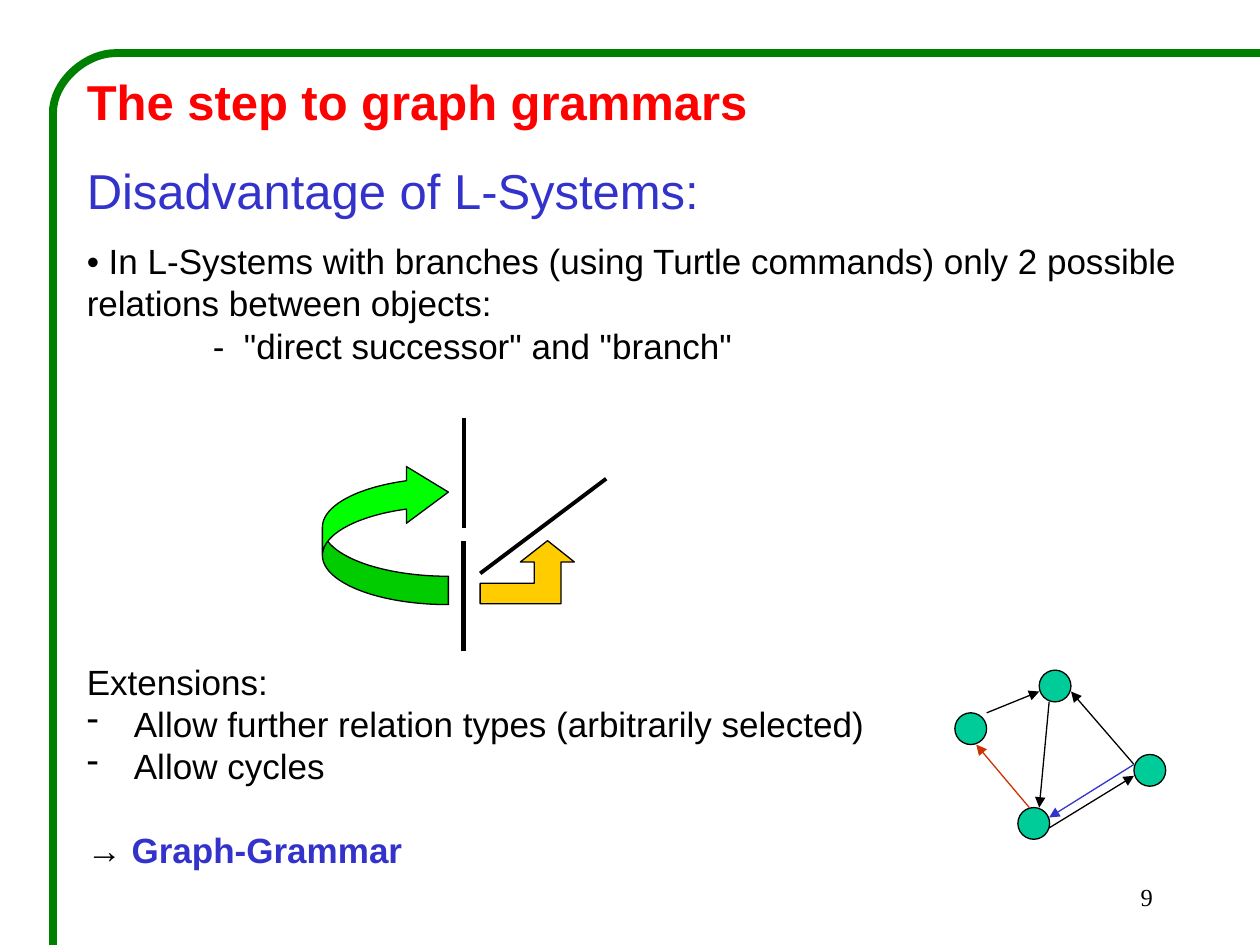
from lxml import etree
from pptx import Presentation
from pptx.dml.color import RGBColor
from pptx.enum.shapes import MSO_CONNECTOR, MSO_SHAPE
from pptx.enum.text import PP_ALIGN
from pptx.oxml.ns import qn
from pptx.util import Cm, Pt

STRAIGHT, CURVE = MSO_CONNECTOR.STRAIGHT, MSO_CONNECTOR.CURVE
ELLIPSE, CURVED_ARROW = MSO_SHAPE.OVAL, MSO_SHAPE.CURVED_RIGHT_ARROW
LEFT, RIGHT = PP_ALIGN.LEFT, PP_ALIGN.RIGHT

WIDTH, HEIGHT = 25.4, 19.05
LEADING = 1.2
COLORS = {
    "black": "000000", "red": "FF0000", "blue": "3333CC", "frame": "008000",
    "successor": "00FF00", "branch": "FFCC00", "node": "00CC99", "edge": "CC3300",
}


def rgb(name):
    return RGBColor.from_string(COLORS[name])


def add_line(s, start, end, color="black", width=0.75, kind=STRAIGHT, arrow=False):
    sp = s.shapes.add_connector(kind, *map(Cm, (*start, *end)))
    sp.line.color.rgb = rgb(color)
    sp.line.width = Pt(width)
    if arrow:
        etree.SubElement(sp.line._get_or_add_ln(), qn("a:tailEnd"), type="triangle")
    etree.SubElement(sp._element.spPr, qn("a:effectLst"))
    return sp


def style_shape(sp, fill):
    sp.shadow.inherit = False
    sp.fill.solid()
    sp.fill.fore_color.rgb = rgb(fill)
    sp.line.color.rgb = rgb("black")
    sp.line.width = Pt(0.75)


def add_text(tf, text, size=20, color="black", bold=False, font="Arial", before=0,
             align=LEFT, indent=0, bullet=None, same_paragraph=False):
    """Append a run, in a new paragraph unless same_paragraph is set."""
    p = tf.paragraphs[-1]
    if not same_paragraph:
        if p.runs:
            p = tf.add_paragraph()
        p.alignment = align
        p.line_spacing = Pt(size * LEADING)
        p.space_before = Pt(before)
        pPr = p._p.get_or_add_pPr()
        pPr.set("marL", str(Cm(indent)))
        if bullet:
            pPr.set("indent", str(-Cm(indent)))
            etree.SubElement(pPr, qn("a:buChar"), char=bullet)
    r = p.add_run()
    r.text = text
    r.font.size, r.font.bold, r.font.name = Pt(size), bold, font
    r.font.color.rgb = rgb(color)


def add_box(s, x, y, w, h):
    tf = s.shapes.add_textbox(Cm(x), Cm(y), Cm(w), Cm(h)).text_frame
    tf.word_wrap = True
    return tf


def frame(s, x, y):
    """Rounded corner at x, y with lines running to the right and bottom edges."""
    r_x, r_y = 1.27, 1.19
    add_line(s, (WIDTH, y), (x + r_x, y), "frame", 4.5)
    add_line(s, (x, y + r_y - 0.1), (x, HEIGHT), "frame", 4.5)
    # The quarter curve is turned by 270 degrees, so width and height swap.
    left, top = x + (r_x - r_y) / 2, y + (r_y - r_x) / 2
    sp = add_line(s, (left, top), (left + r_y, top + r_x), "frame", 4.5, CURVE)
    spPr = sp._element.spPr
    spPr.find(qn("a:prstGeom")).set("prst", "curvedConnector2")
    spPr.find(qn("a:xfrm")).set("rot", str(270 * 60000))


def branch_diagram(s, x, y):
    stem = x + 2.85
    add_line(s, (stem, y + 4.7), (stem, y + 2.47), width=3)
    add_line(s, (stem, y + 2.21), (stem, y), width=2.25)
    add_line(s, (x + 3.18, y + 3.13), (x + 5.72, y + 1.22), width=2.25)

    sp = s.shapes.add_shape(CURVED_ARROW, Cm(x), Cm(y + 0.92), Cm(2.54), Cm(2.84))
    for i, value in enumerate((0.225, 0.45, 0.333)):
        sp.adjustments[i] = value
    sp._element.spPr.find(qn("a:xfrm")).set("flipV", "1")
    style_shape(sp, "successor")

    outline = [(1.36, 0), (0.81, 0.43), (1.09, 0.43), (1.09, 0.86), (0, 0.86),
               (0, 1.27), (1.63, 1.27), (1.63, 0.43), (1.9, 0.43)]
    points = [(Cm(x + 3.18 + dx), Cm(y + 2.47 + dy)) for dx, dy in outline]
    builder = s.shapes.build_freeform(*points[0])
    builder.add_line_segments(points[1:], close=True)
    style_shape(builder.convert_to_shape(), "branch")


def cycle_graph(s, x, y):
    for dx, dy in [(0, 0.86), (1.7, 0), (3.61, 1.7), (1.27, 2.77)]:
        sp = s.shapes.add_shape(ELLIPSE, Cm(x + dx), Cm(y + dy), Cm(0.64), Cm(0.64))
        style_shape(sp, "node")
    edges = [
        (1.5, 2.77, 0.43, 1.5, "edge"),
        (0.64, 0.86, 1.7, 0.43, "black"),
        (1.9, 0.64, 1.7, 2.77, "black"),
        (3.61, 1.9, 2.34, 0.43, "black"),
        (3.61, 1.9, 1.9, 2.97, "blue"),
        (1.9, 3.18, 3.61, 2.13, "black"),
    ]
    for x1, y1, x2, y2, color in edges:
        add_line(s, (x + x1, y + y1), (x + x2, y + y2), color, arrow=True)


def body_text(s, x, y, w, h):
    tf = add_box(s, x, y, w, h)
    add_text(tf, "The step to graph grammars", size=28, color="red", bold=True)
    add_text(tf, "Disadvantage of L-Systems:", size=28, color="blue", before=17)
    add_text(tf, "• In L-Systems with branches (using Turtle commands) only 2 possible "
                 "relations between objects:", before=12)
    add_text(tf, '-  "direct successor" and "branch"', indent=2.54)
    add_text(tf, "Extensions:", before=168)
    for item in ("Allow further relation types (arbitrarily selected)", "Allow cycles"):
        add_text(tf, item, indent=0.95, bullet="-")
    add_text(tf, "→ ", before=24)
    add_text(tf, "Graph-Grammar", color="blue", bold=True, same_paragraph=True)


def page_number(s, x, y, w, h):
    add_text(add_box(s, x, y, w, h), "9", size=14, font="Times New Roman", align=RIGHT)


def main():
    prs = Presentation()
    prs.slide_width, prs.slide_height = Cm(WIDTH), Cm(HEIGHT)
    s = prs.slides.add_slide(prs.slide_layouts[6])
    branch_diagram(s, 6.5, 8.43)
    cycle_graph(s, 19.25, 13.51)
    frame(s, 1.07, 1.07)
    page_number(s, 18.21, 17.65, 5.28, 1.27)
    body_text(s, 1.5, 1.32, 23.06, 16.51)
    prs.save("out.pptx")


if __name__ == "__main__":
    main()
